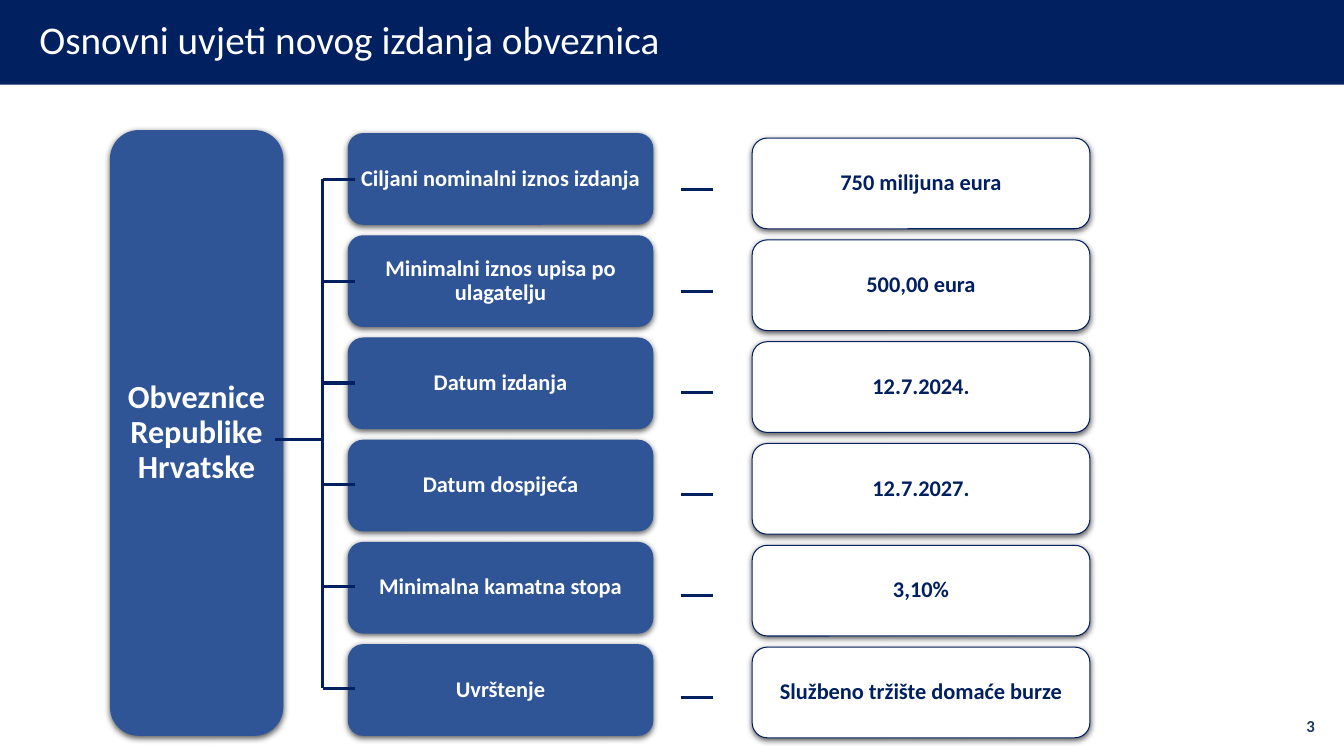
"""Build a slide of the basic terms of a new bond issue."""
import pptx
import pptx.dml.color
import pptx.enum.shapes
import pptx.enum.text
import pptx.oxml
import pptx.oxml.ns
import pptx.util

Inches = pptx.util.Inches
Pt = pptx.util.Pt
ALIGN = pptx.enum.text.PP_ALIGN
SHAPE = pptx.enum.shapes.MSO_SHAPE
COLORS = {"navy": "002060", "blue": "2F5597", "white": "FFFFFF", "page": "203864"}
FONT = "Calibri"
TERMS = [
    ("Ciljani nominalni iznos izdanja", "750 milijuna eura"),
    ("Minimalni iznos upisa po ulagatelju", "500,00 eura"),
    ("Datum izdanja", "12.7.2024."),
    ("Datum dospijeća", "12.7.2027."),
    ("Minimalna kamatna stopa", "3,10%"),
    ("Uvrštenje", "Službeno tržište domaće burze"),
]
NS = pptx.oxml.ns.nsdecls("a")
SHADOW = (
    f'<a:effectLst {NS}><a:outerShdw blurRad="57150" dist="19050" dir="5400000" '
    'algn="ctr" rotWithShape="0"><a:srgbClr val="000000"><a:alpha val="63000"/>'
    "</a:srgbClr></a:outerShdw></a:effectLst>"
)


def color(name):
    """Return a named colour."""
    return pptx.dml.color.RGBColor.from_string(COLORS[name])


def write(shape, text, size, ink, bold=True, align=ALIGN.CENTER, inset=0.01, space=0.9):
    """Write formatted text into a shape."""
    frame = shape.text_frame
    frame.text = text
    frame.word_wrap = True
    frame.auto_size = pptx.enum.text.MSO_AUTO_SIZE.NONE
    frame.vertical_anchor = pptx.enum.text.MSO_ANCHOR.MIDDLE
    frame.margin_left = frame.margin_right = Inches(inset)
    frame.margin_top = frame.margin_bottom = Inches(min(inset, 0.05))
    para = frame.paragraphs[0]
    para.alignment = align
    para.line_spacing = space
    font = para.font
    font.name, font.size, font.bold = FONT, Pt(size), bold
    font.color.rgb = color(ink)


def add_box(slide, place, fill, kind=SHAPE.ROUNDED_RECTANGLE, edge=None, shadow=True):
    """Add a filled box, with an edge and a shadow if asked."""
    box = slide.shapes.add_shape(kind, *map(Inches, place))
    box.fill.solid()
    box.fill.fore_color.rgb = color(fill)
    if edge:
        box.line.color.rgb = color(edge)
        box.line.width = Pt(0.75)
    else:
        box.line.fill.background()
    if shadow:
        box._element.spPr.append(pptx.oxml.parse_xml(SHADOW))
    else:
        box.shadow.inherit = False
    return box


def add_line(slide, *ends):
    """Add a straight line between two points."""
    line = slide.shapes.add_connector(
        pptx.enum.shapes.MSO_CONNECTOR.STRAIGHT, *map(Inches, ends)
    )
    line.line.color.rgb = color("navy")
    line.line.width = Pt(2.25)
    line._element.spPr.append(pptx.oxml.parse_xml(f"<a:effectLst {NS}/>"))


def add_title(slide, text):
    """Set the title on a dark band."""
    band = add_box(slide, (0, 0, 13.33, 0.84), "navy", SHAPE.RECTANGLE, shadow=False)
    slide.shapes._spTree.insert(2, band._element)
    title = slide.shapes.title
    title.left, title.top = Inches(0.29), Inches(0.06)
    title.width, title.height = Inches(11.5), Inches(0.71)
    write(title, text, 28, "white", bold=False, align=ALIGN.LEFT, inset=0.1)


def add_page(slide, text):
    """Add the page number."""
    box = slide.shapes.add_textbox(*map(Inches, (12.7, 7, 0.44, 0.4)))
    write(box, text, 12, "page", align=ALIGN.RIGHT, inset=0.1, space=1)


def row_top(first, last, row):
    """Return the height of a row spaced evenly from first to last."""
    return first + (last - first) * row / (len(TERMS) - 1)


def add_terms(slide):
    """Add each term with its value."""
    for row, (label, value) in enumerate(TERMS):
        top = row_top(1.32, 6.39, row)
        box = add_box(slide, (3.45, top, 3.03, 0.91), "blue")
        write(box, label, 16, "white")
        top = row_top(1.37, 6.42, row)
        box = add_box(slide, (7.46, top, 3.35, 0.9), "white", edge="navy")
        write(box, value, 16, "navy")


def add_links(slide):
    """Add the bracket and the dashes between the boxes."""
    add_line(slide, 2.73, 4.36, 3.2, 4.36)
    add_line(slide, 3.2, 1.78, 3.2, 6.83)
    for row in range(len(TERMS)):
        mid = row_top(1.78, 6.83, row)
        add_line(slide, 3.2, mid, 3.52, mid)
        mid = row_top(1.88, 6.92, row)
        add_line(slide, 6.75, mid, 7.07, mid)


def main():
    """Build and save the slide."""
    deck = pptx.Presentation()
    deck.slide_width, deck.slide_height = Inches(13.33), Inches(7.5)
    slide = deck.slides.add_slide(deck.slide_layouts[5])
    add_title(slide, "Osnovni uvjeti novog izdanja obveznica")
    add_page(slide, "3")
    issue = add_box(slide, (1.09, 1.29, 1.72, 6.01), "blue")
    write(issue, "Obveznice Republike Hrvatske", 23, "white", inset=0.02)
    add_terms(slide)
    add_links(slide)
    deck.save("out.pptx")


if __name__ == "__main__":
    main()
